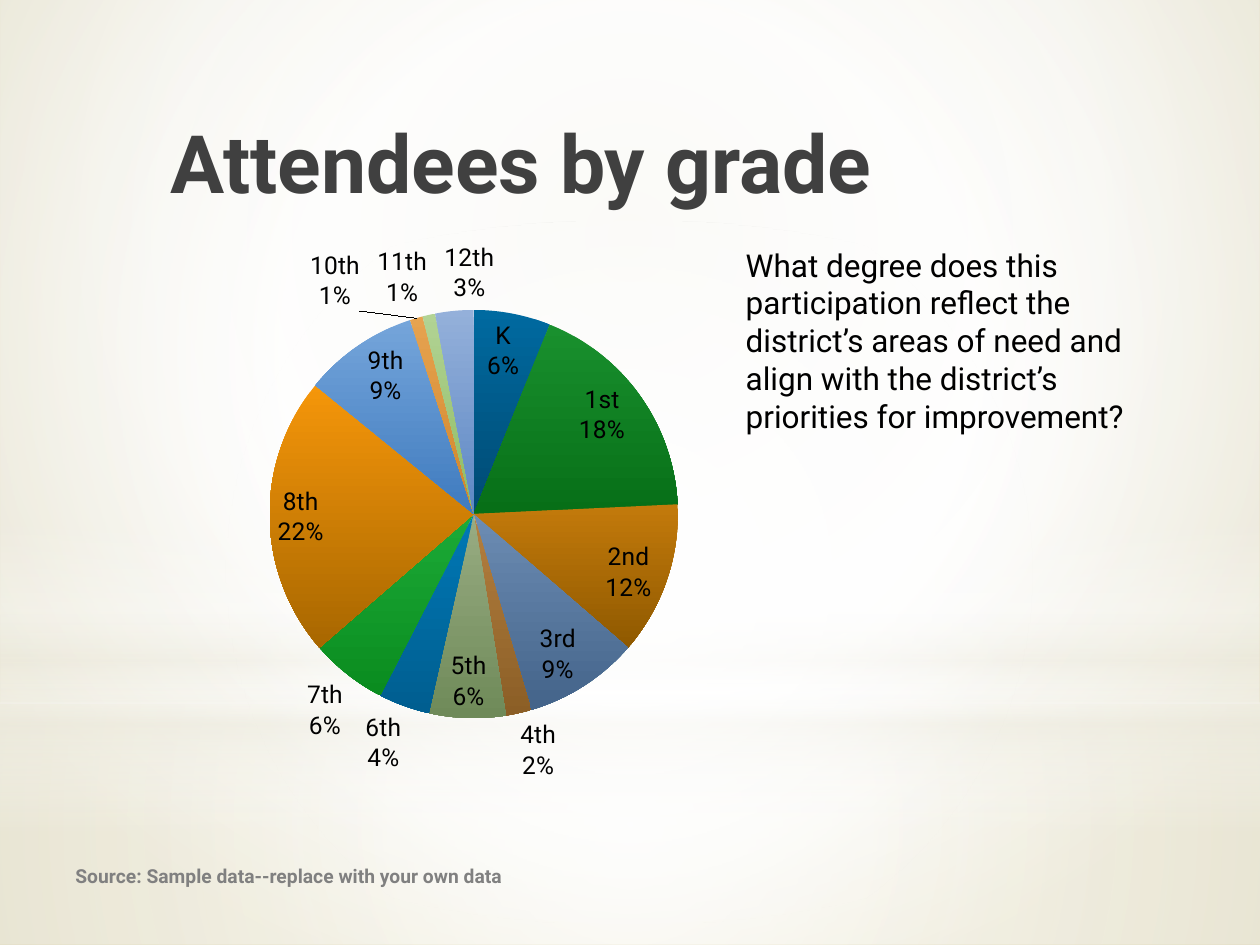
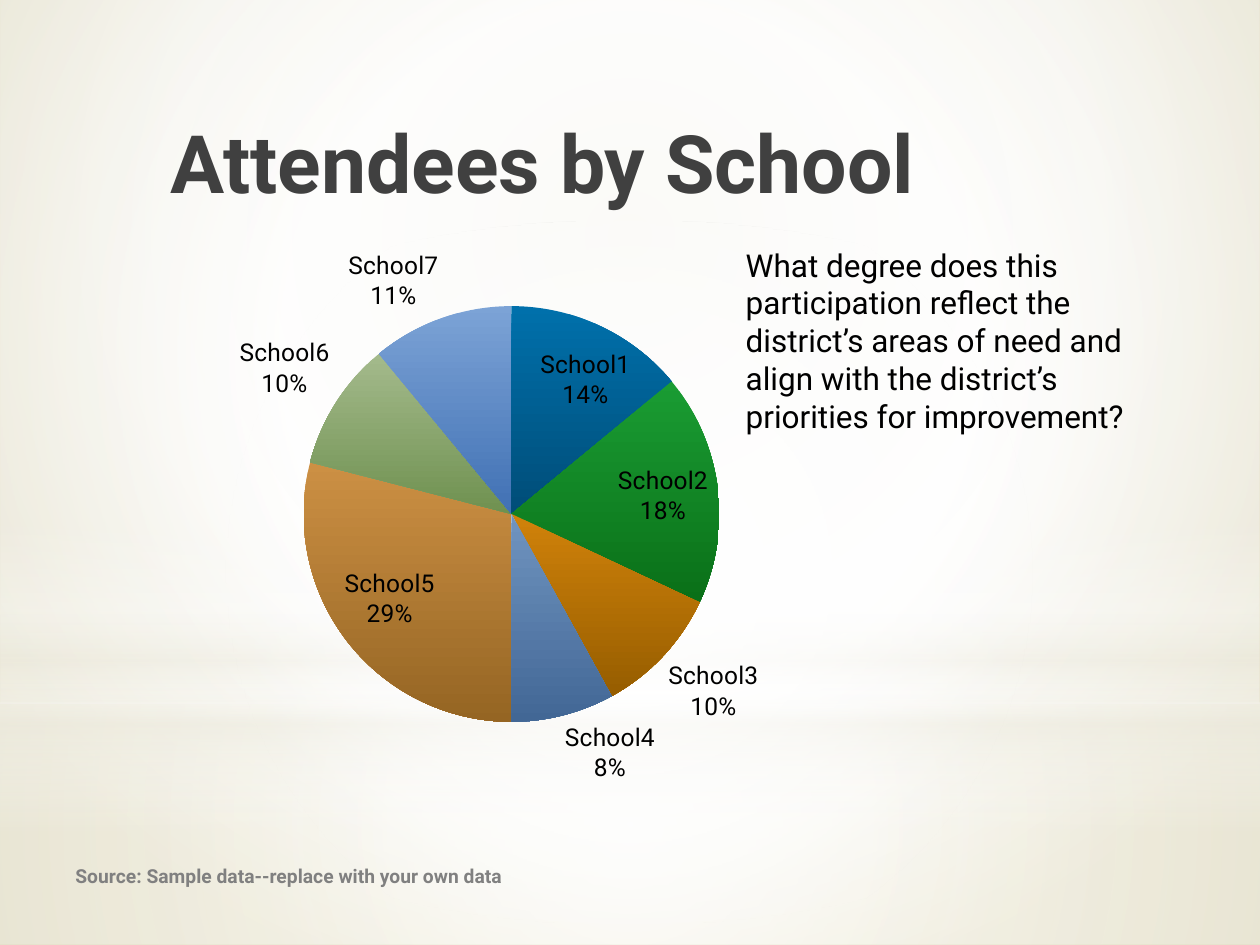
from lxml import etree
from pptx import Presentation
from pptx.chart.data import CategoryChartData
from pptx.dml.color import RGBColor
from pptx.enum.chart import XL_CHART_TYPE, XL_LABEL_POSITION as LABEL
from pptx.enum.shapes import MSO_SHAPE as SHAPE
from pptx.enum.text import MSO_ANCHOR as ANCHOR, PP_ALIGN as ALIGN
from pptx.oxml import parse_xml
from pptx.oxml.ns import nsdecls, qn
from pptx.util import Inches, Pt

FONT = "Roboto"
BLACK, CHARCOAL, GREY = "000000", "404040", "808080"
CENTRE = (50, 50, 50, 50)
BACKGROUND = [(0, "E7E4D4"), (60, "FFFFFF"), (100, "D5CC9F")]
BACKDROP = [
    (SHAPE.RECTANGLE, (0, 5.58, 10, 1.92), CENTRE,
     [(0, "FFFFFF", 91), (37, "FFFFFF", 76), (100, "EEECE1", 79)]),
    (SHAPE.RECTANGLE, (0, 0, 10, 5.58), CENTRE,
     [(0, "FFFFFF", 83), (48, "FFFFFF", 83), (100, "EEECE1", 83)]),
    (SHAPE.RECTANGLE, (0, 4.12, 10, 2.5), None,
     [(0, "FFFFFF", 0), (29, "FFFFFF", 30), (45, "EEECE1", 40),
      (55, "FFFFFF", 26), (65, "EEECE1", 60), (100, "FFFFFF", 0)]),
    (SHAPE.OVAL, (0, 1.75, 10, 5.58), CENTRE,
     [(0, "FFFFFF", 100), (56, "FFFFFF", 0)]),
]
QUESTION = ("What degree does this participation reflect the district’s areas of need "
            "and align with the district’s priorities for improvement?")
SOURCE = "Source: Sample data--replace with your own data"
GRADES = [
    ("K", 6, "006AA0", "004A73"), ("1st", 18, "19902E", "076F17"),
    ("2nd", 12, "C37A0B", "8F5900"), ("3rd", 9, "6C8CB3", "44648A"),
    ("4th", 2, "B48040", "8B5E26"), ("5th", 6, "98AC82", "6F8A59"),
    ("6th", 4, "0078B5", "005E90"), ("7th", 6, "1CAA37", "0A8C1F"),
    ("8th", 22, "F5960A", "A86700"), ("9th", 9, "75A5DA", "3F7BBF"),
    ("10th", 1, "E6A350", "D0852B"), ("11th", 1, "B2D394", "8DBB63"),
    ("12th", 3, "94B0DA", "5D88C4"),
]
SCHOOLS = [
    ("School1", 14, "0070AB", "004D78"), ("School2", 18, "1A9C33", "0A7018"),
    ("School3", 10, "D0820A", "965D00"), ("School4", 8, "7094C0", "426795"),
    ("School5", 29, "CC9044", "956523"), ("School6", 10, "A4BA8C", "6F9150"),
    ("School7", 11, "7CA3D6", "4171B4"),
]


def rgb(value):
    return RGBColor.from_string(value)


def inches(box):
    return [Inches(v) for v in box]


def write(tf, text, size=18, color=BLACK, bold=False, anchor=ANCHOR.TOP, top=0.05):
    tf.word_wrap = True
    tf.vertical_anchor = anchor
    tf.margin_top = Inches(top)
    p = tf.paragraphs[0]
    p.alignment = ALIGN.LEFT
    r = p.add_run()
    r.text = text
    r.font.name, r.font.size, r.font.bold = FONT, Pt(size), bold
    r.font.color.rgb = rgb(color)


def gradient(element, stops, focus=None):
    fill = parse_xml(f'<a:gradFill {nsdecls("a")} rotWithShape="1"><a:gsLst/></a:gradFill>')
    for pos, color, *alpha in stops:
        gs = etree.SubElement(fill[0], qn("a:gs"), pos=str(pos * 1000))
        clr = etree.SubElement(gs, qn("a:srgbClr"), val=color)
        for a in alpha:
            etree.SubElement(clr, qn("a:alpha"), val=str(a * 1000))
    if focus:
        route = etree.SubElement(fill, qn("a:path"), path="circle")
        sides = {side: str(v * 1000) for side, v in zip("ltrb", focus)}
        etree.SubElement(route, qn("a:fillToRect"), **sides)
    else:
        etree.SubElement(fill, qn("a:lin"), ang="5400000", scaled="0")
    solid = element.find(".//" + qn("a:solidFill"))
    solid.getparent().replace(solid, fill)


class Deck:
    """Holds the shared style and the slide being built."""

    def __init__(self):
        self.prs = Presentation()
        self.prs.slide_width, self.prs.slide_height = Inches(10), Inches(7.5)
        self.slide = None
        master = self.prs.slide_master
        master.background.fill.solid()
        master.background.fill.fore_color.rgb = rgb("FFFFFF")
        gradient(master.element, BACKGROUND, (20, 10, 20, 60))

    def new_slide(self, title):
        self.slide = self.prs.slides.add_slide(self.prs.slide_layouts[5])
        sp = self.slide.shapes.title
        sp.left, sp.top, sp.width, sp.height = inches((1.25, 0.81, 7.12, 1.25))
        write(sp.text_frame, title, size=46, color=CHARCOAL, bold=True, top=0.09)

    def backdrop(self):
        tree = self.prs.slide_master.shapes.element
        for i, (kind, box, focus, stops) in enumerate(BACKDROP):
            sp = self.slide.shapes.add_shape(kind, *inches(box))
            sp.shadow.inherit = False
            sp.line.fill.background()
            sp.fill.solid()
            sp.fill.fore_color.rgb = rgb("FFFFFF")
            gradient(sp.element, stops, focus)
            sp.element.find(".//" + qn("p:cNvPr")).set("id", str(100 + i))
            tree.insert(2 + i, sp.element)

    def text(self, box, text, **fmt):
        sp = self.slide.shapes.add_textbox(*inches(box))
        write(sp.text_frame, text, **fmt)

    def pie(self, box, center, diameter, slices):
        data = CategoryChartData()
        data.categories = [name for name, *_ in slices]
        data.add_series("Series 1", [value for _, value, *_ in slices])
        chart = self.slide.shapes.add_chart(XL_CHART_TYPE.PIE, *inches(box), data).chart
        chart.has_legend = chart.has_title = False
        chart.font.name, chart.font.size = FONT, Pt(18)
        chart.font.color.rgb = rgb(BLACK)
        plot = chart.plots[0]
        plot.vary_by_categories = True
        for i, (_, _, light, dark) in enumerate(slices):
            fmt = plot.series[0].points[i].format
            fmt.line.fill.background()
            fmt.fill.gradient()
            fmt.fill.gradient_angle = 270
            for stop, color in zip(fmt.fill.gradient_stops, (light, dark)):
                stop.color.rgb = rgb(color)
        self.pie_labels(plot)
        self.pie_layout(chart, box, center, diameter)

    def pie_labels(self, plot):
        plot.has_data_labels = True
        labels = plot.data_labels
        labels.show_value = False
        labels.show_category_name = labels.show_percentage = True
        labels.number_format, labels.number_format_is_linked = "0%", False
        labels.position = LABEL.BEST_FIT
        labels.font.name, labels.font.size = FONT, Pt(14)
        labels.font.color.rgb = rgb(BLACK)
        element = plot.series[0].points[0].format and labels._element
        separator = parse_xml(f'<c:separator {nsdecls("c")}>\n</c:separator>')
        element.find(qn("c:showBubbleSize")).addnext(separator)
        leader = element.find(qn("c:showLeaderLines"))
        if leader is None:
            leader = etree.SubElement(element, qn("c:showLeaderLines"))
        leader.set("val", "1")

    def pie_layout(self, chart, box, center, diameter):
        left, top, width, height = box
        places = {
            "x": (center[0] - diameter / 2 - left) / width,
            "y": (center[1] - diameter / 2 - top) / height,
            "w": diameter / width,
            "h": diameter / height,
        }
        layout = parse_xml(f'<c:layout {nsdecls("c")}><c:manualLayout/></c:layout>')
        manual = layout[0]
        etree.SubElement(manual, qn("c:layoutTarget"), val="inner")
        for axis in "xy":
            etree.SubElement(manual, qn(f"c:{axis}Mode"), val="edge")
        for key, value in places.items():
            etree.SubElement(manual, qn(f"c:{key}"), val=f"{value:.4f}")
        area = chart.element.find(".//" + qn("c:plotArea"))
        for old in area.findall(qn("c:layout")):
            area.remove(old)
        area.insert(0, layout)

    def attendees(self, title, *pie):
        self.new_slide(title)
        self.pie(*pie)
        self.text((5.82, 1.9, 3.38, 1.62), QUESTION)
        self.text((0.5, 6.75, 6.08, 0.4), SOURCE, size=11, color=GREY, bold=True,
                  anchor=ANCHOR.MIDDLE)


def main():
    deck = Deck()
    deck.attendees("Attendees by grade", (0.54, 1.79, 6.84, 4.59), (3.76, 4.08), 3.24, GRADES)
    deck.backdrop()
    deck.attendees("Attendees by School", (1.25, 1.81, 5.51, 4.57), (4.06, 4.08), 3.3, SCHOOLS)
    deck.prs.save("out.pptx")


if __name__ == "__main__":
    main()
